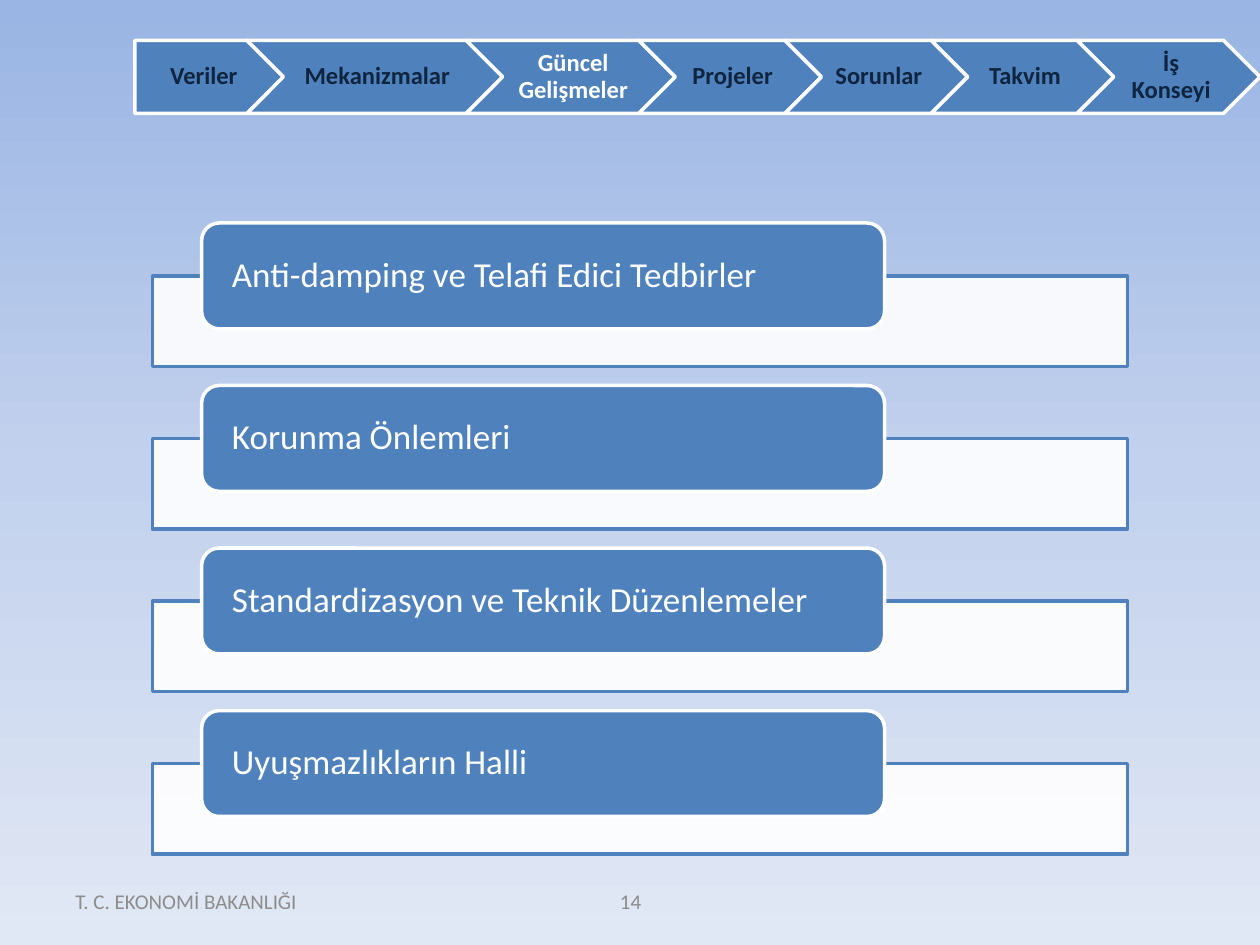
from copy import deepcopy

from lxml.etree import SubElement
from pptx import Presentation
from pptx.dml.color import RGBColor
from pptx.enum.shapes import MSO_SHAPE
from pptx.enum.text import MSO_ANCHOR, PP_ALIGN
from pptx.oxml.ns import qn
from pptx.util import Inches, Pt

BLUE, WHITE, NAVY, GRAY = "4F81BD", "FFFFFF", "0F243E", "8C8C8C"
BACKGROUND_STOPS = [(0, "9AB5E4"), (0.5, "C2D1ED"), (1, "E1E8F5")]

STEPS = [
    ("Veriler", 1.18),
    ("Mekanizmalar", 2.03),
    ("Güncel Gelişmeler", 1.66),
    ("Projeler", 1.45),
    ("Sorunlar", 1.45),
    ("Takvim", 1.45),
    ("İş Konseyi", 1.45),
]
CURRENT_STEP = "Güncel Gelişmeler"
STEP_LEFT, STEP_TOP, STEP_HEIGHT, STEP_OVERLAP = 1.07, 0.32, 0.58, 0.29

TOPICS = [
    "Anti-damping ve Telafi Edici Tedbirler",
    "Korunma Önlemleri",
    "Standardizasyon ve Teknik Düzenlemeler",
    "Uyuşmazlıkların Halli",
]
TOPIC_TOP, TOPIC_PITCH, FRAME_OFFSET = 1.77, 1.29, 0.42

FOOTERS = [
    ("T. C. EKONOMİ BAKANLIĞI", (0.5, 6.95, 2.33, 0.4), PP_ALIGN.LEFT),
    ("14", (3.42, 6.95, 3.17, 0.4), PP_ALIGN.CENTER),
]

STEP_FORMAT = {"size": Pt(14), "bold": True}
TOPIC_FORMAT = {"size": Pt(20)}
FOOTER_FORMAT = {"size": Pt(12)}


def rgb(color):
    return RGBColor.from_string(color)


def paint_background(slide):
    fill = slide.background.fill
    fill.gradient()
    fill.gradient_angle = 270
    stop_list = slide.element.find(".//" + qn("a:gsLst"))
    stop_list.append(deepcopy(stop_list[0]))
    for stop, (position, color) in zip(fill.gradient_stops, BACKGROUND_STOPS):
        stop.position = position
        stop.color.rgb = rgb(color)


def add_box(slide, preset, place, fill_color, line_color):
    shape = slide.shapes.add_shape(preset, *map(Inches, place))
    shape.shadow.inherit = False
    shape.fill.solid()
    shape.fill.fore_color.rgb = rgb(fill_color)
    shape.line.color.rgb = rgb(line_color)
    shape.line.width = Pt(2)
    return shape


def write(shape, text, color, alignment, font_format, margins, spacing=1.0):
    frame = shape.text_frame
    frame.word_wrap = True
    frame.vertical_anchor = MSO_ANCHOR.MIDDLE
    for side, margin in zip(("left", "top", "right", "bottom"), margins):
        setattr(frame, "margin_" + side, Inches(margin))
    paragraph = frame.paragraphs[0]
    paragraph.alignment = alignment
    paragraph.line_spacing = spacing
    run = paragraph.add_run()
    run.text = text
    run.font.color.rgb = rgb(color)
    for name, value in {"name": "Calibri", **font_format}.items():
        setattr(run.font, name, value)


def add_topics(slide):
    for index, topic in enumerate(TOPICS):
        top = TOPIC_TOP + index * TOPIC_PITCH
        frame = add_box(slide, MSO_SHAPE.RECTANGLE,
                        (1.21, top + FRAME_OFFSET, 7.74, 0.72), WHITE, BLUE)
        fill_color = frame.element.spPr.find(qn("a:solidFill"))[0]
        SubElement(fill_color, qn("a:alpha"), val="90000")
        label = add_box(slide, MSO_SHAPE.ROUNDED_RECTANGLE,
                        (1.6, top, 5.42, 0.84), BLUE, WHITE)
        write(label, topic, WHITE, PP_ALIGN.LEFT, TOPIC_FORMAT, (0.2, 0, 0.2, 0), 0.9)


def add_steps(slide):
    left = STEP_LEFT
    for index, (step, width) in enumerate(STEPS):
        preset = MSO_SHAPE.CHEVRON if index else MSO_SHAPE.PENTAGON
        shape = add_box(slide, preset, (left, STEP_TOP, width, STEP_HEIGHT), BLUE, WHITE)
        color = WHITE if step == CURRENT_STEP else NAVY
        margins = (0.06 if index else 0.08, 0.04, 0.02, 0.04)
        write(shape, step, color, PP_ALIGN.CENTER, STEP_FORMAT, margins, 0.9)
        left += width - STEP_OVERLAP


def add_footers(slide):
    for text, place, alignment in FOOTERS:
        box = slide.shapes.add_textbox(*map(Inches, place))
        write(box, text, GRAY, alignment, FOOTER_FORMAT, (0.1, 0.05, 0.1, 0.05))


def main():
    presentation = Presentation()
    presentation.slide_width = Inches(10)
    presentation.slide_height = Inches(7.5)
    slide = presentation.slides.add_slide(presentation.slide_layouts[6])
    paint_background(slide)
    add_footers(slide)
    add_topics(slide)
    add_steps(slide)
    presentation.save("out.pptx")


if __name__ == "__main__":
    main()
